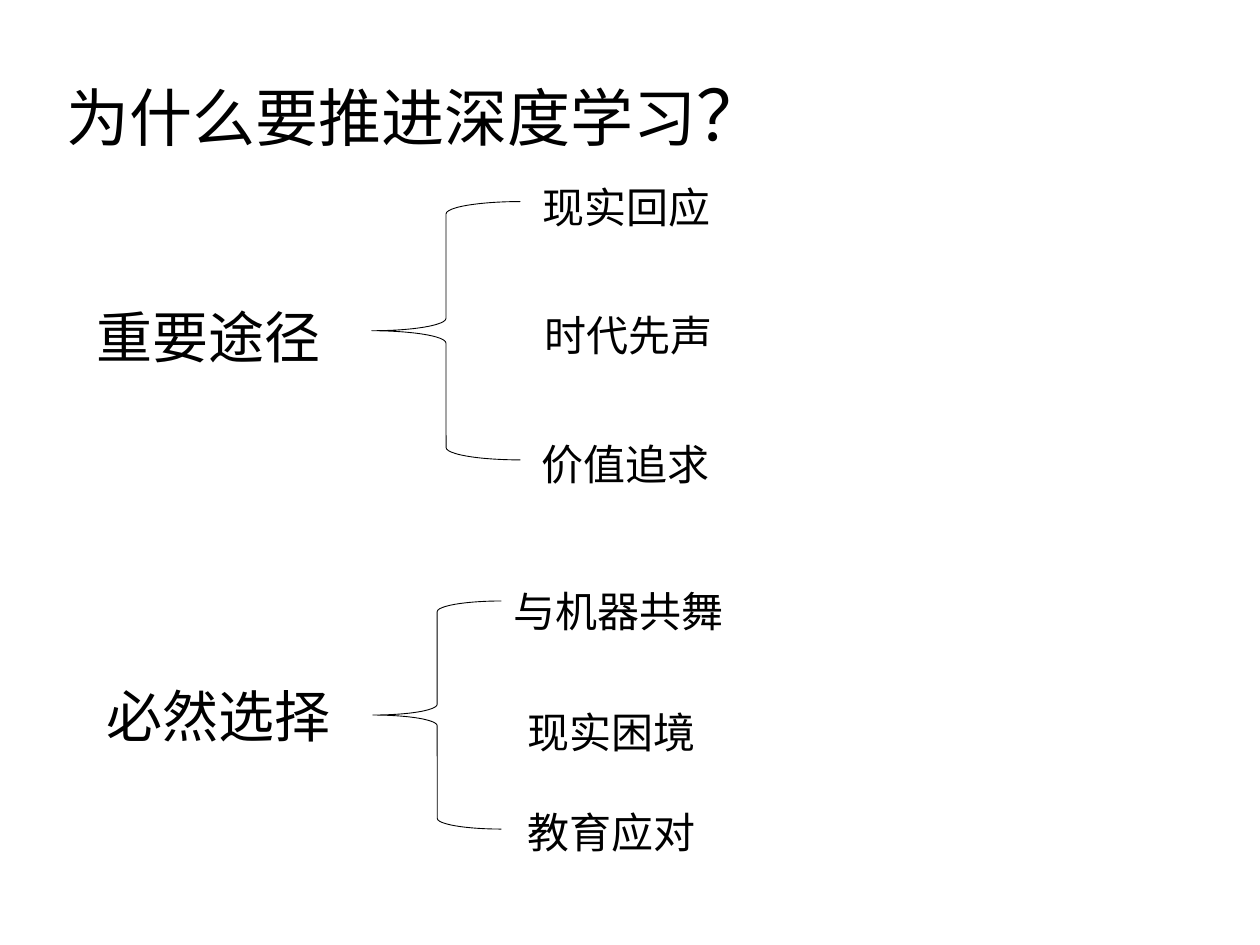
from pptx import Presentation
from pptx.dml.color import RGBColor
from pptx.enum.shapes import MSO_SHAPE as Shape
from pptx.enum.text import MSO_AUTO_SIZE as Fit
from pptx.util import Emu, Pt

PX = 9144  # 100 px to the inch
BLACK = RGBColor(0, 0, 0)
WHITE = RGBColor(255, 255, 255)
FONT = "Arial"


def px(*nums):
    return [Emu(n * PX) for n in nums]


def add_text(slide, box, *runs, color=BLACK, font=FONT):
    """Place one line of text; each run is a (words, size) pair."""
    frame = slide.shapes.add_textbox(*px(*box)).text_frame
    frame.word_wrap = True
    frame.auto_size = Fit.SHAPE_TO_FIT_TEXT
    for words, size in runs:
        run = frame.paragraphs[0].add_run()
        run.text = words
        run.font.size = Pt(size)
        run.font.name = font
        run.font.color.rgb = color


def add_brace(slide, box):
    brace = slide.shapes.add_shape(Shape.LEFT_BRACE, *px(*box))
    brace.shadow.inherit = False
    brace.fill.background()
    brace.line.color.rgb = BLACK
    brace.line.width = Pt(0.5)


def add_title(slide, box):
    add_text(slide, box, ("为什么要推进深度学习", 36), ("？", 40))


def add_group(slide, box, head, brace, items):
    """Place a heading, its brace and its items relative to the box."""
    left, top, wide, high = box

    # Heading at the left edge
    words, down, width = head
    add_text(slide, (left, top + down, width, 64), (words, 32))

    # Brace between heading and items
    x, y, w, h = brace
    add_brace(slide, (left + x, top + y, w, h))

    # Items, each reaching the right edge of the box
    for words, x, y in items:
        add_text(slide, (left + x, top + y, wide - x, 50), (words, 24))


def main():
    deck = Presentation()
    deck.slide_width, deck.slide_height = px(1000, 750)
    slide = deck.slides.add_slide(deck.slide_layouts[6])
    slide.background.fill.solid()
    slide.background.fill.fore_color.rgb = WHITE

    add_title(slide, (43, 52, 587, 77))

    # Upper group
    add_group(slide, (67, 139, 540, 254),
              ("重要途径", 96, 217), (228, 21, 118, 205),
              [("现实回应", 354, 0), ("时代先声", 355, 102),
               ("价值追求", 353, 204)])

    # Lower group
    add_group(slide, (75, 460, 554, 225),
              ("必然选择", 76, 248), (221, 17, 102, 181),
              [("与机器共舞", 323, 0), ("现实困境", 334, 96),
               ("教育应对", 334, 175)])

    deck.save("out.pptx")


if __name__ == "__main__":
    main()
